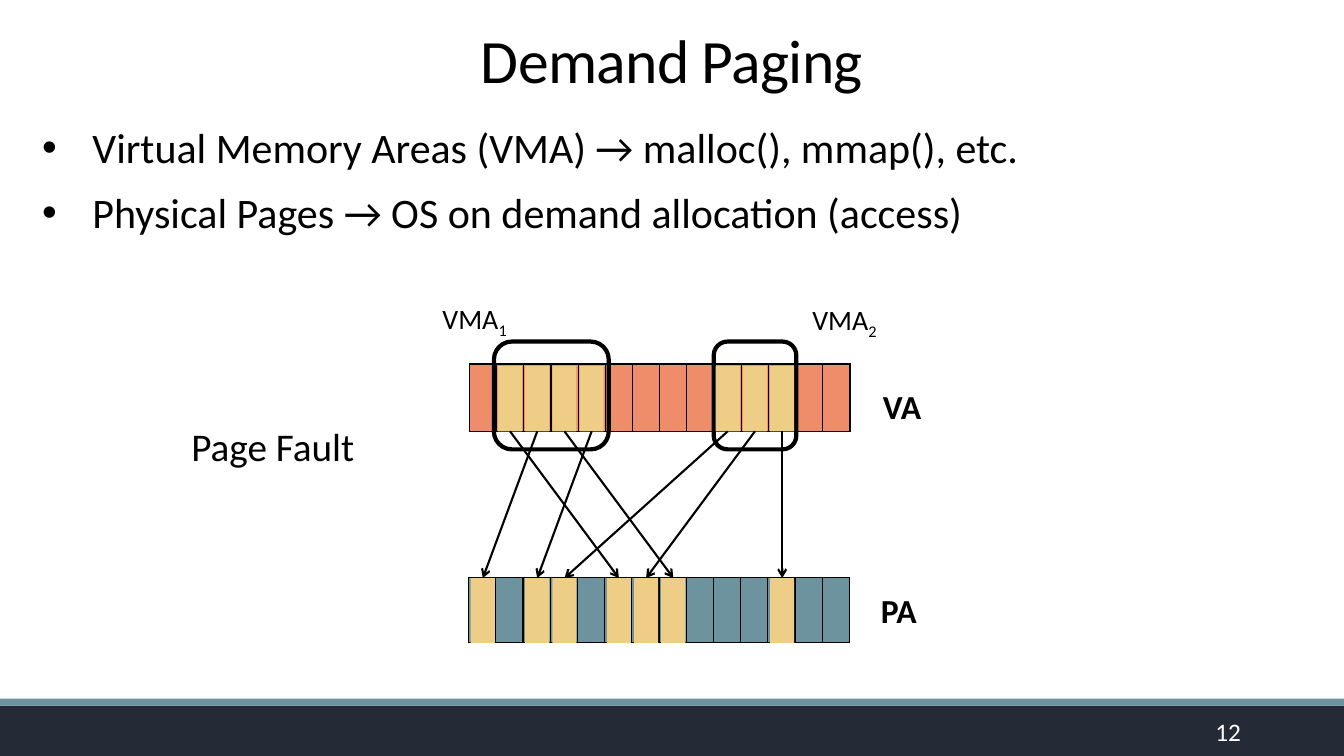
from lxml.etree import SubElement
from pptx import Presentation
from pptx.dml.color import RGBColor
from pptx.enum.shapes import MSO_CONNECTOR, MSO_SHAPE
from pptx.enum.text import MSO_ANCHOR, MSO_AUTO_SIZE, PP_ALIGN
from pptx.oxml.ns import qn
from pptx.util import Pt

BLACK, WHITE = "000000", "FFFFFF"
TEAL, NAVY, CORAL, SAND = "6D939E", "242B37", "EF8C6A", "EECD86"
WIDTH, HEIGHT = 960, 540

PAGES, PITCH, PAGE_W = 14, 19.44, 17.28
# Virtual page index -> physical page index
MAPPING = {1: 5, 2: 0, 3: 7, 4: 2, 9: 3, 10: 6, 11: 11}


def rgb(color):
    return RGBColor.from_string(color)


def assign(obj, **values):
    for name, value in values.items():
        setattr(obj, name, value)


def format_run(r, size, color=BLACK, bold=False):
    assign(r.font, name="Calibri", size=Pt(size), bold=bold)
    r.font.color.rgb = rgb(color)


def add_text(slide, box, text, size, color=BLACK, bold=False, sub=None,
             wrap=False, align=PP_ALIGN.LEFT, anchor=MSO_ANCHOR.TOP):
    tf = slide.shapes.add_textbox(*map(Pt, box)).text_frame
    assign(tf, word_wrap=wrap, vertical_anchor=anchor)
    for i, line in enumerate(text.split("\n")):
        p = tf.add_paragraph() if i else tf.paragraphs[0]
        p.alignment = align
        r = p.add_run()
        r.text = line
        format_run(r, size, color, bold)
    if sub:
        r = p.add_run()
        r.text = sub
        format_run(r, size, color, bold)
        r.font._element.set("baseline", "-25000")
    return tf


def add_box(slide, kind, box, fill=None, line=None):
    sp = slide.shapes.add_shape(kind, *map(Pt, box))
    sp.shadow.inherit = False
    if fill:
        sp.fill.solid()
        sp.fill.fore_color.rgb = rgb(fill)
    else:
        sp.fill.background()
    if line:
        sp.line.color.rgb = rgb(line)
        sp.line.width = Pt(3)
    else:
        sp.line.fill.background()
    return sp


def add_arrow(slide, start, end):
    cx = slide.shapes.add_connector(MSO_CONNECTOR.STRAIGHT, 0, 0, 0, 0)
    cx.begin_connect(start, 2)
    cx.end_connect(end, 0)
    cx.line.color.rgb = rgb(BLACK)
    cx.line.width = Pt(1.5)
    SubElement(cx.line._get_or_add_ln(), qn("a:tailEnd"), type="arrow")
    SubElement(cx._element.spPr, qn("a:effectLst"))


def add_border(cell):
    tc_pr = cell._tc.get_or_add_tcPr()
    for i, side in enumerate(("a:lnL", "a:lnR", "a:lnT", "a:lnB")):
        ln = tc_pr.makeelement(qn(side), {"w": str(Pt(1))})
        fill = SubElement(ln, qn("a:solidFill"))
        SubElement(fill, qn("a:srgbClr"), val=BLACK)
        tc_pr.insert(i, ln)


def add_memory(slide, left, top, height, fill):
    frame = slide.shapes.add_table(1, PAGES, Pt(left), Pt(top),
                                   Pt(PAGES * PITCH), Pt(height))
    table = frame.table
    assign(table, first_row=False, horz_banding=False)
    table.rows[0].height = Pt(height)
    for column in table.columns:
        column.width = Pt(PITCH)
    for cell in table.iter_cells():
        assign(cell, margin_left=0, margin_right=0)
        cell.fill.solid()
        cell.fill.fore_color.rgb = rgb(fill)
        add_border(cell)


def add_pages(slide, indexes, left, top, height):
    return {i: add_box(slide, MSO_SHAPE.RECTANGLE,
                       (left + i * PITCH, top, PAGE_W, height), SAND)
            for i in indexes}


def add_footer(slide, left, top, width, height):
    add_box(slide, MSO_SHAPE.RECTANGLE, (left, top + 5, width, height - 5), NAVY)
    add_box(slide, MSO_SHAPE.RECTANGLE, (left, top, width, 5), TEAL)
    add_text(slide, (left + 790.5, top + 9.3, 103, 28.8), "12", 18, WHITE,
             wrap=True, align=PP_ALIGN.RIGHT, anchor=MSO_ANCHOR.MIDDLE)


def add_title(slide, left, top, width, height):
    title = slide.shapes.title
    assign(title, left=Pt(left), top=Pt(top), width=Pt(width), height=Pt(height))
    tf = title.text_frame
    assign(tf, auto_size=MSO_AUTO_SIZE.NONE, vertical_anchor=MSO_ANCHOR.BOTTOM)
    p = tf.paragraphs[0]
    assign(p, alignment=PP_ALIGN.CENTER, line_spacing=0.85)
    r = p.add_run()
    r.text = "Demand Paging"
    format_run(r, 44)
    r.font._element.set("spc", "-50")


def add_bullets(slide, left, top, width, height):
    tf = add_text(slide, (left, top, width, height),
                  "Virtual Memory Areas (VMA) → malloc(), mmap(), etc.\n"
                  "Physical Pages → OS on demand allocation (access)",
                  30, wrap=True)
    for p in tf.paragraphs:
        p.space_after = Pt(10)
        p_pr = p._p.get_or_add_pPr()
        p_pr.set("marL", str(Pt(36)))
        p_pr.set("indent", str(Pt(-36)))
        SubElement(p_pr, qn("a:buFont"), typeface="Arial")
        SubElement(p_pr, qn("a:buChar"), char="•")


def add_diagram(slide, left, top):
    pa_top = top + 152.6

    # Address spaces
    add_memory(slide, left + 0.5, top, 48.24, CORAL)
    add_memory(slide, left, pa_top, 46.08, TEAL)
    add_text(slide, (left + 288.7, top + 12.2, 42.5, 36), "VA", 24, bold=True)
    add_text(slide, (left + 287.3, pa_top + 5, 40.3, 36), "PA", 24, bold=True)

    # Virtual memory areas
    for x, width, label_x, label_y, number in (
            (18, 82, -25.9, -48.3, "1"), (175, 59, 238.3, -47.5, "2")):
        add_box(slide, MSO_SHAPE.ROUNDED_RECTANGLE,
                (left + x, top - 16, width, 77), line=BLACK)
        add_text(slide, (left + label_x, top + label_y, 62, 31.7), "VMA", 20,
                 sub=number)

    # Mapped pages and their arrows
    virtual = add_pages(slide, MAPPING, left + 1.44, top + 1.3, 46.8)
    physical = add_pages(slide, MAPPING.values(), left + 1.44, pa_top + 0.3, 46.3)
    for va, pa in MAPPING.items():
        add_arrow(slide, virtual[va], physical[pa])


def main():
    prs = Presentation()
    assign(prs, slide_width=Pt(WIDTH), slide_height=Pt(HEIGHT))
    slide = prs.slides.add_slide(prs.slide_layouts[5])
    add_footer(slide, 0, 499, WIDTH, 41)
    add_title(slide, 0, 0.7, WIDTH, 71.3)
    add_diagram(slide, 334.8, 260)
    add_bullets(slide, 23, 83.5, 930, 90)
    add_text(slide, (129.6, 298, 131.8, 41), "Page Fault", 28)
    prs.save("out.pptx")


if __name__ == "__main__":
    main()
